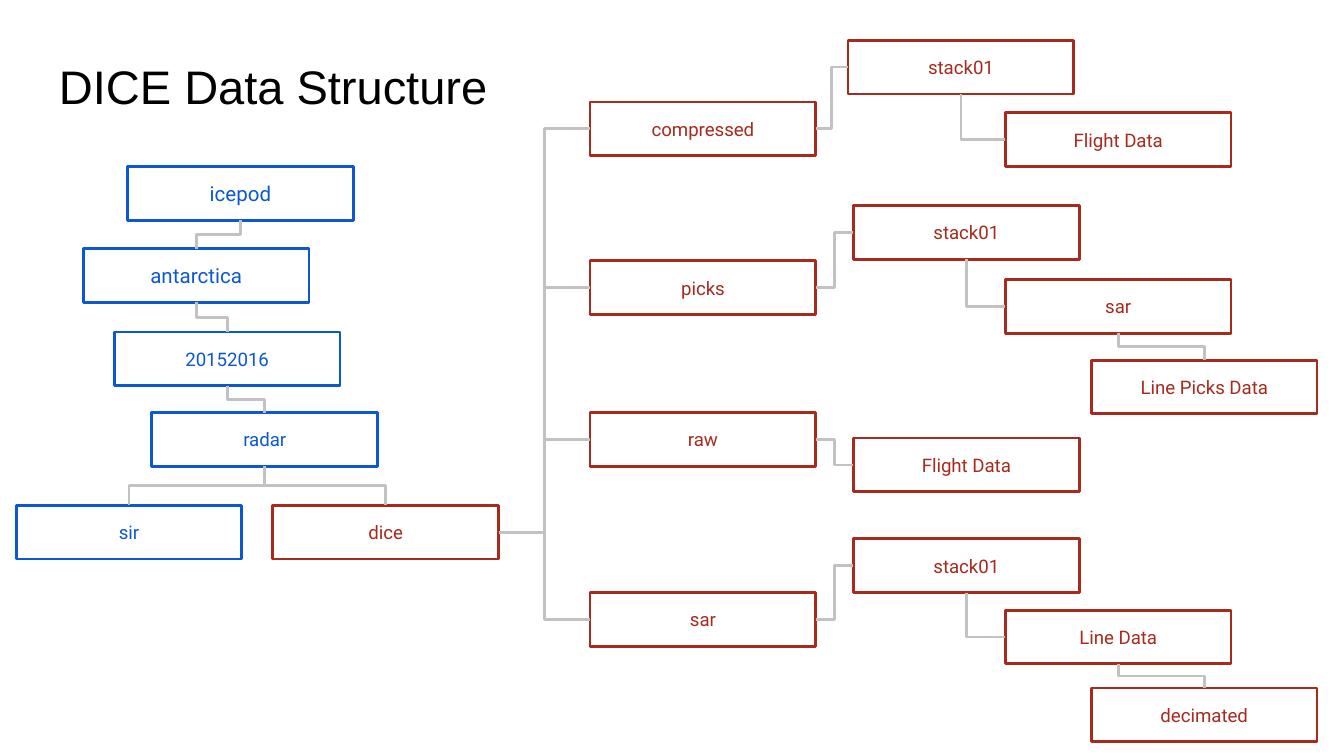
from pptx import Presentation
from pptx.dml.color import RGBColor
from pptx.enum.shapes import MSO_CONNECTOR, MSO_SHAPE
from pptx.enum.text import MSO_ANCHOR, PP_ALIGN
from pptx.oxml.ns import qn
from pptx.util import Inches, Pt
from lxml.etree import SubElement

COLORS = {"blue": "0C58D3", "red": "A72A1E", "gray": "C2C2C2", "black": "000000"}
NODE_W, NODE_H = 1.68, 0.4
PAD = {f"margin_{side}": Inches(0.1) for side in ("left", "right", "top", "bottom")}
TITLE = {**PAD, "word_wrap": True, "vertical_anchor": MSO_ANCHOR.TOP}
LABEL = {**TITLE, "vertical_anchor": MSO_ANCHOR.MIDDLE}

# Sides of the parent and the child that each route joins
ROUTES = {"across": (3, 1), "down": (2, 0), "hook": (2, 1)}

# Steps: text, offset from the box, route from the step before, text size
FOLDERS = [
    ("icepod", 0.83, 0, None, 11),
    ("antarctica", 0.5, 0.61, "down", 11),
    ("20152016", 0.73, 1.23, "down", 10),
    ("radar", 1.01, 1.83, "down", 10),
]
PRODUCTS = [
    (0.76, [("compressed", 0, 0, "across", 10),
            ("stack01", 1.92, -0.46, "across", 10),
            ("Flight Data", 3.09, 0.08, "hook", 10)]),
    (1.94, [("picks", 0, 0, "across", 10),
            ("stack01", 1.96, -0.41, "across", 10),
            ("sar", 3.09, 0.14, "hook", 10),
            ("Line Picks Data", 3.73, 0.74, "down", 10)]),
    (3.07, [("raw", 0, 0, "across", 10),
            ("Flight Data", 1.96, 0.19, "across", 10)]),
    (4.41, [("sar", 0, 0, "across", 10),
            ("stack01", 1.96, -0.4, "across", 10),
            ("Line Data", 3.09, 0.13, "hook", 10),
            ("decimated", 3.73, 0.71, "down", 10)]),
]


def rgb(name):
    return RGBColor.from_string(COLORS[name])


def assign(target, values):
    for key, value in values.items():
        setattr(target, key, value)


def write(shape, text, frame, align, font, color):
    assign(shape.text_frame, frame)
    para = shape.text_frame.paragraphs[0]
    para.alignment = align
    run = para.add_run()
    run.text = text
    assign(run.font, font)
    run.font.color.rgb = rgb(color)


def outline(line, color):
    line.width = Pt(1.5)
    line.color.rgb = rgb(color)


def node(slide, text, left, top, size, color):
    box = (Inches(v) for v in (left, top, NODE_W, NODE_H))
    shape = slide.shapes.add_shape(MSO_SHAPE.RECTANGLE, *box)
    shape.shadow.inherit = False
    shape.fill.background()
    outline(shape.line, color)
    write(shape, text, LABEL, PP_ALIGN.CENTER,
          {"name": "Roboto", "size": Pt(size)}, color)
    return shape


def join(slide, parent, child, route):
    start, end = ROUTES[route]
    link = slide.shapes.add_connector(MSO_CONNECTOR.ELBOW, 0, 0, 0, 0)
    link.begin_connect(parent, start)
    link.end_connect(child, end)
    outline(link.line, "gray")
    props = link._element.spPr
    SubElement(props, qn("a:effectLst"))
    if route == "across":
        return
    # A link that leaves downward is a turned elbow with its sides swapped
    right = link.end_x > link.begin_x
    mid_x, mid_y = link.left + link.width // 2, link.top + link.height // 2
    wide, high = link.height, link.width
    assign(link, {"left": mid_x - wide // 2, "top": mid_y - high // 2,
                  "width": wide, "height": high})
    props.xfrm.set("rot", str((270 if right else 90) * 60000))
    props.xfrm.set("flipH", "1" if right else "0")
    if route == "hook":
        props.find(qn("a:prstGeom")).set("prst", "bentConnector2")


def chain(slide, left, top, steps, color, parent=None):
    for text, x, y, route, size in steps:
        shape = node(slide, text, left + x, top + y, size, color)
        if parent is not None:
            join(slide, parent, shape, route)
        parent = shape
    return parent


def heading(slide, left, top, width, height):
    box = (Inches(v) for v in (left, top, width, height))
    write(slide.shapes.add_textbox(*box), "DICE Data Structure", TITLE,
          PP_ALIGN.LEFT, {"name": "Arial", "size": Pt(25.2)}, "black")


def folders(slide, left, top):
    radar = chain(slide, left, top, FOLDERS, "blue")
    chain(slide, left, top, [("sir", 0, 2.52, "down", 10)], "blue", radar)
    return chain(slide, left, top, [("dice", 1.91, 2.52, "down", 10)], "red", radar)


def products(slide, left, dice):
    for top, steps in PRODUCTS:
        chain(slide, left, top, steps, "red", dice)


def main():
    deck = Presentation()
    # Widescreen, 16 to 9
    deck.slide_width, deck.slide_height = Inches(10), Inches(10) * 9 // 16
    slide = deck.slides.add_slide(deck.slide_layouts[6])
    # Title, folder path on the left, data products on the right
    heading(slide, 0.34, 0.33, 9.32, 0.63)
    dice = folders(slide, 0.12, 1.24)
    products(slide, 4.39, dice)
    deck.save("out.pptx")


if __name__ == "__main__":
    main()
